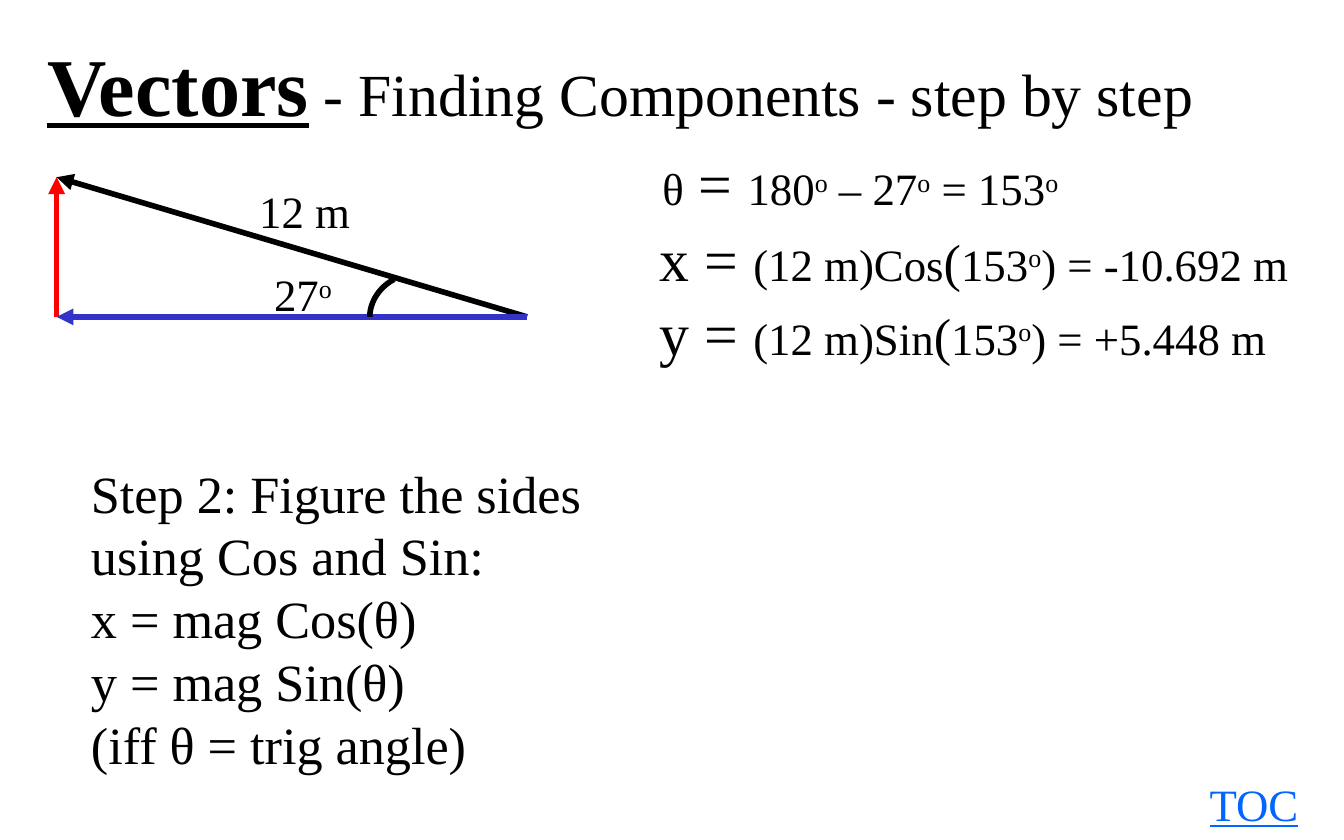
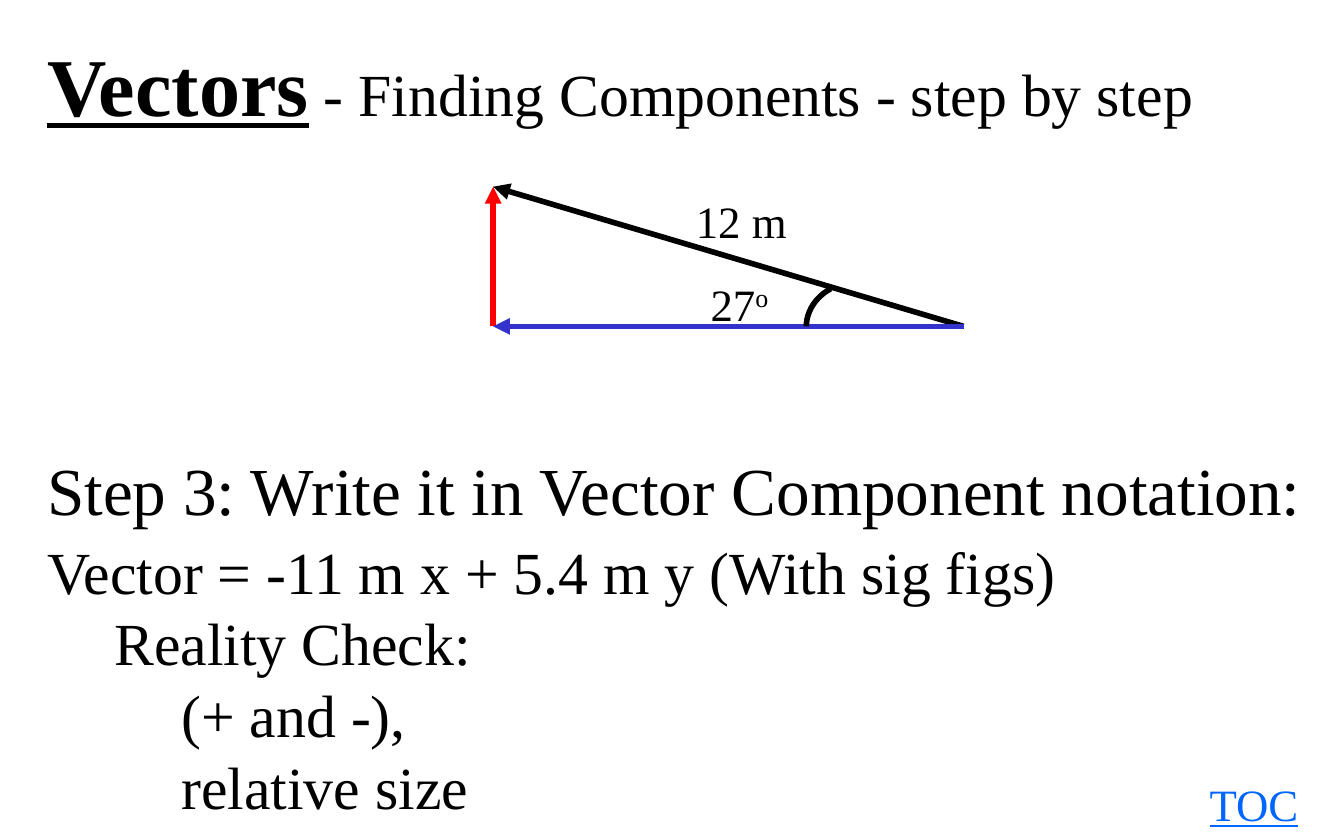
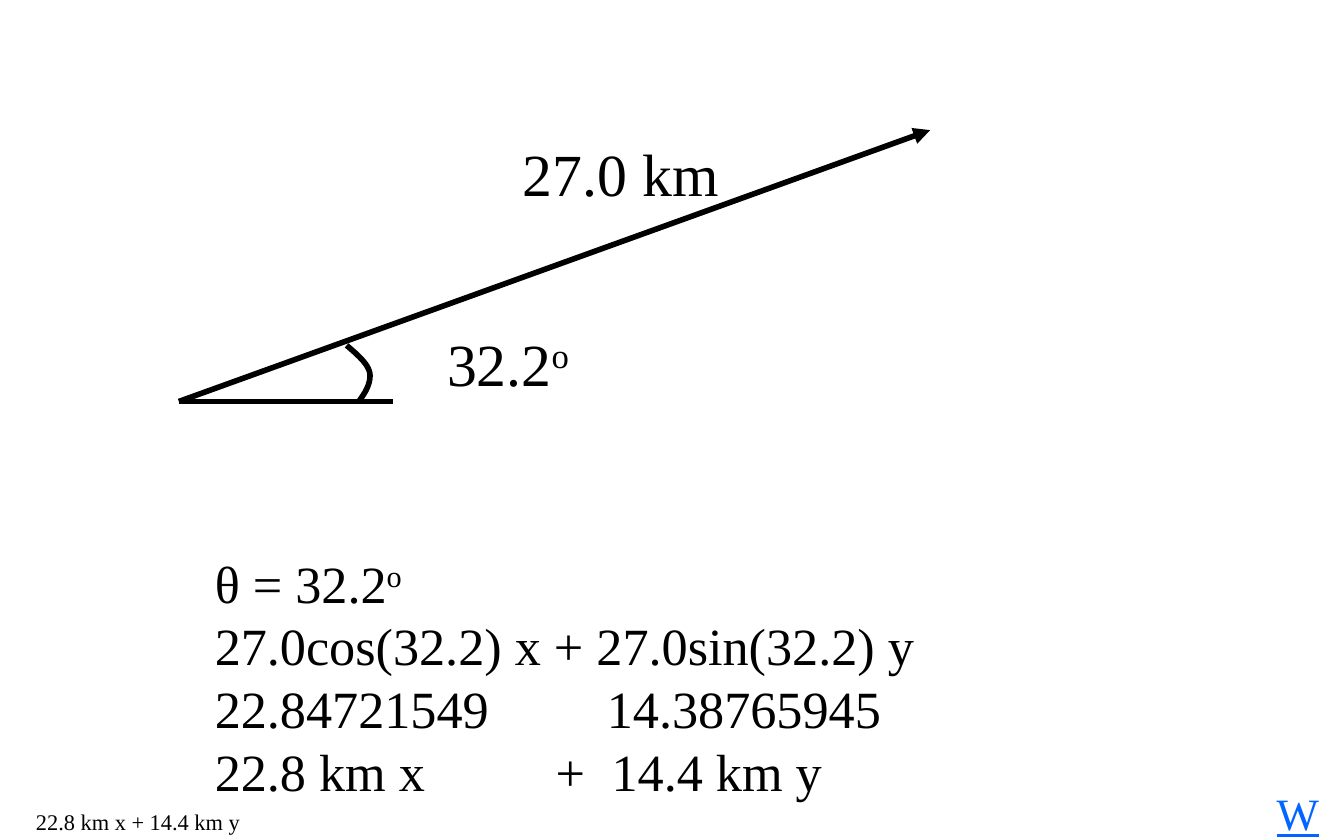
from lxml import etree
from pptx import Presentation
from pptx import util as u
from pptx.dml.color import RGBColor
from pptx.enum import shapes as kinds, text
from pptx.oxml.ns import qn

COLORS = {"ink": "000000", "link": "0066FF", "rise": "FF0000", "run": "3333CC"}
FONT = "Times New Roman"
HANGING = 1.27


def add_text(shapes, box, paragraphs, size, color="ink", underline=None, levels=None, tabs=()):
    frame = shapes.add_textbox(*[u.Cm(value) for value in box]).text_frame
    frame.word_wrap = False
    frame.auto_size = text.MSO_AUTO_SIZE.SHAPE_TO_FIT_TEXT
    for index, runs in enumerate(paragraphs):
        paragraph = frame.paragraphs[0] if index == 0 else frame.add_paragraph()
        properties = paragraph._p.get_or_add_pPr()
        if levels:
            paragraph.level = levels[index]
            properties.set("marL", str(u.Cm(HANGING * (levels[index] + 1))))
            properties.set("indent", str(-u.Cm(HANGING)))
        if "\t" in runs:
            tab_list = etree.SubElement(properties, qn("a:tabLst"))
            for position in tabs[index]:
                etree.SubElement(tab_list, qn("a:tab"), pos=str(u.Cm(position)), algn="l")
        paragraph.font.name = FONT
        paragraph.font.size = u.Pt(size)
        paragraph.font.color.rgb = RGBColor.from_string(COLORS[color])
        paragraph.font.underline = underline
        if isinstance(runs, str):
            runs = [(runs, None)]
        for wording, run_size, *heading in runs:
            for part, piece in enumerate(wording.split("^")):
                if not piece:
                    continue
                run = paragraph.add_run()
                run.text = piece
                if run_size:
                    run.font.size = u.Pt(run_size)
                if heading:
                    run.font.bold = run.font.underline = True
                if part % 2:
                    run._r.get_or_add_rPr().set("baseline", "30000")


def add_stroke(shapes, points, color="ink", arrow=False):
    if len(points) == 2:
        ends = [u.Cm(value) for point in points for value in point]
        stroke = shapes.add_connector(kinds.MSO_CONNECTOR.STRAIGHT, *ends)
    else:
        curve = []
        for first in range(0, len(points) - 1, 3):
            for step in range(13):
                t = step / 12
                weights = ((1 - t) ** 3, 3 * t * (1 - t) ** 2, 3 * t ** 2 * (1 - t), t ** 3)
                controls = points[first:first + 4]
                curve.append([u.Cm(sum(w * p[axis] for w, p in zip(weights, controls)))
                              for axis in (0, 1)])
        builder = shapes.build_freeform(*curve[0])
        builder.add_line_segments(curve[1:], close=False)
        stroke = builder.convert_to_shape()
        stroke.fill.background()
        stroke.shadow.inherit = False
    stroke.line.color.rgb = RGBColor.from_string(COLORS[color])
    stroke.line.width = u.Pt(3)
    if arrow:
        etree.SubElement(stroke.line._get_or_add_ln(), qn("a:tailEnd"), type="triangle")
    if len(points) == 2:
        etree.SubElement(stroke._element.spPr, qn("a:effectLst"))


presentation = Presentation()
presentation.slide_width = u.Cm(25.4)
presentation.slide_height = u.Cm(15.88)
sides_slide, notation_slide, answer_slide = [
    presentation.slides.add_slide(presentation.slide_layouts[6]) for _ in range(3)]

title = [("Vectors", 44, "heading"), (" - Finding Components - step by step", 32)]
for slide in (sides_slide, notation_slide):
    add_text(slide.shapes, (0.64, 0.53, 22.38, 2.13), [title], 32)
    add_text(slide.shapes, (22.61, 14.55, 2.21, 1.27), ["TOC"], 24, "link", True)

steps = ["Step 2: Figure the sides", "using Cos and Sin:", "x = mag Cos(θ)",
         "y = mag Sin(θ)", "(iff θ = trig angle)"]
add_text(sides_slide.shapes, (1.47, 8.59, 9.88, 6.25), steps, 28, levels=[0] * 5)
for top, width, axis, function, result in ((4.06, 12.55, "x", "Cos", "-10.692"),
                                           (5.46, 12.12, "y", "Sin", "+5.448")):
    component = [(f"{axis} = ", 32), (f"(12 m){function}", 24), ("(", 28),
                 (f"153^o^) = {result} m", 24)]
    add_text(sides_slide.shapes, (12.22, top, width, 1.63), [component], 24)
angle = [("θ", 24), (" = ", 32), ("180^o^ – 27^o^ = 153^o", 24)]
add_text(sides_slide.shapes, (12.27, 2.64, 8.43, 1.63), [angle], 24)

add_text(notation_slide.shapes, (0.64, 8.36, 24.46, 1.8),
         ["Step 3: Write it in Vector Component notation:"], 36, levels=[0])
checks = ["Vector = -11 m x + 5.4 m y (With sig figs)", "Reality Check:",
          "(+ and -),", "relative size"]
add_text(notation_slide.shapes, (0.64, 9.98, 19.76, 5.74), checks, 32, levels=[0, 1, 2, 2])

for slide, x, y in ((sides_slide, 1.07, 5.99), (notation_slide, 9.32, 6.17)):
    triangle = slide.shapes.add_group_shape().shapes
    corner, tip, start = (x, y), (x, y - 2.64), (x + 8.89, y)
    add_stroke(triangle, [corner, tip], "rise", True)
    add_stroke(triangle, [start, tip], arrow=True)
    add_text(triangle, (x + 3.58, y - 2.64, 2.24, 1.3), ["12 m"], 24)
    add_stroke(triangle, [(x + 4.45, y), (x + 7.62, y)])
    add_text(triangle, (x + 3.86, y - 1.07, 1.65, 1.3), ["27^o"], 24)
    add_stroke(triangle, [start, corner], "run", True)
    add_stroke(triangle, [(x + 6.38, y - 0.71), (x + 6.1, y - 0.56),
                          (x + 5.92, y - 0.28), (x + 5.92, y)])

shapes = answer_slide.shapes
add_text(shapes, (0.43, 15.16, 4.42, 0.76), ["22.8 km x + 14.4 km y"], 12)
add_text(shapes, (23.88, 14.73, 1.32, 1.27), ["W"], 24, "link", True)
add_stroke(shapes, [(3.38, 7.59), (17.58, 2.46)], arrow=True)
add_stroke(shapes, [(3.38, 7.59), (7.42, 7.59)])
add_stroke(shapes, [(6.55, 6.53), (6.76, 6.71), (6.96, 6.88), (6.99, 7.06),
                    (7.01, 7.24), (6.91, 7.42), (6.78, 7.59)])
add_text(shapes, (8.2, 6.05, 2.9, 1.63), ["32.2^o"], 32)
add_text(shapes, (9.63, 2.46, 4.24, 1.63), ["27.0 km"], 32)
working = ["θ = 32.2^o", "27.0cos(32.2) x + 27.0sin(32.2) y",
           "22.84721549\t14.38765945", "22.8 km x\t+\t14.4 km y"]
add_text(shapes, (3.81, 10.29, 13.87, 5.05), working, 28,
         tabs=[(), (), (7.41,), (6.44, 7.5)])

presentation.save("out.pptx")
